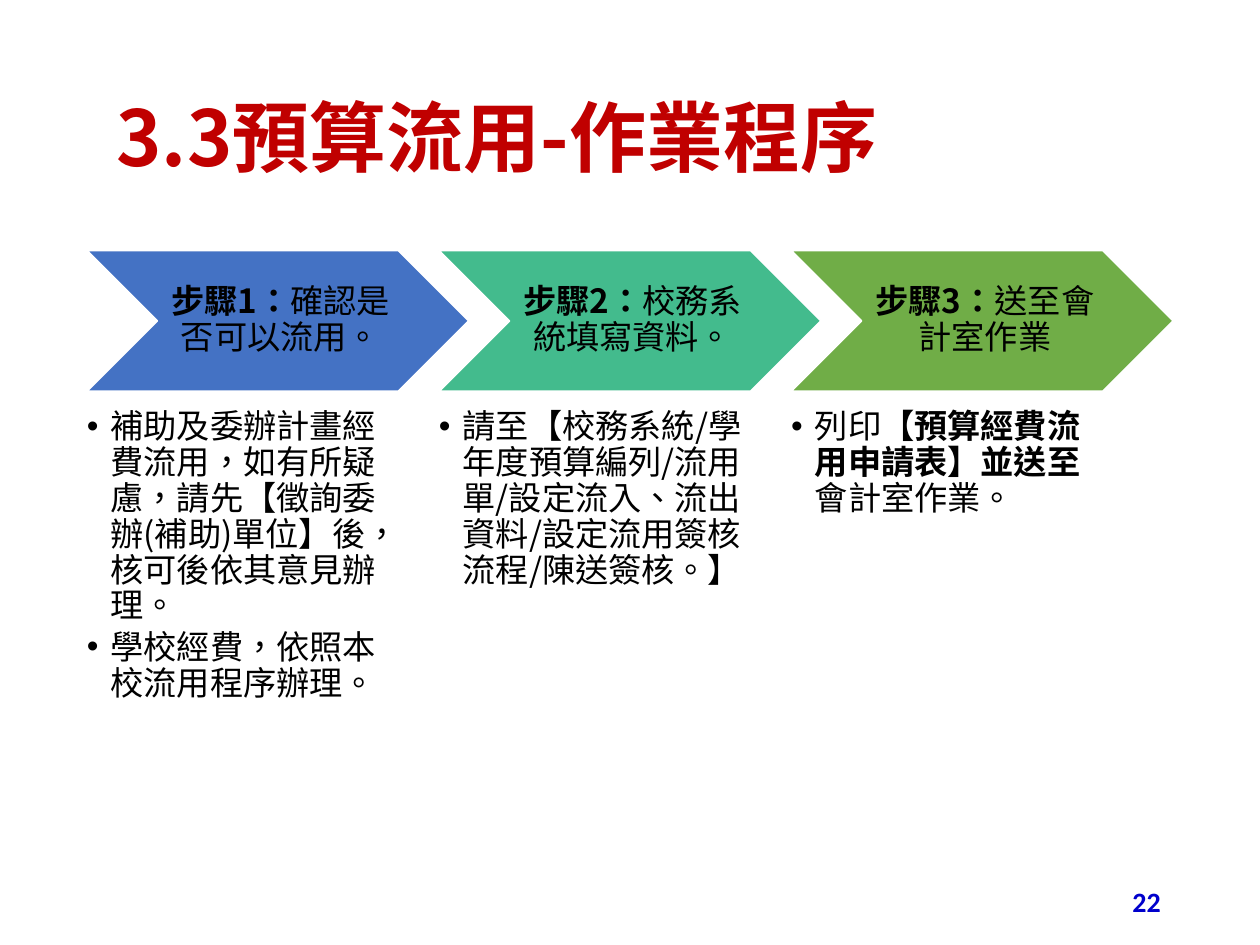
from pptx import Presentation
from pptx.dml.color import RGBColor
from pptx.enum.shapes import MSO_SHAPE as Shape
from pptx.enum.text import MSO_ANCHOR as Anchor, PP_ALIGN as Align
from pptx.oxml.ns import qn
from pptx.util import Cm, Pt
from lxml.etree import SubElement

RED = RGBColor(0xC0, 0x00, 0x00)
NAVY = RGBColor(0x00, 0x00, 0xCC)
BLACK = RGBColor(0x00, 0x00, 0x00)
WHITE = RGBColor(0xFF, 0xFF, 0xFF)
BLUE = RGBColor(0x44, 0x72, 0xC4)
TEAL = RGBColor(0x43, 0xBB, 0x8D)
GREEN = RGBColor(0x70, 0xAD, 0x47)
SANS = "Noto Sans CJK SC"

# Each step: colour, heading, bullets; a bullet is a list of (text, bold) runs.
STEPS = [
    (BLUE, [("步驟1：", True), ("確認是否可以流用。", False)],
     [[("補助及委辦計畫經費流用，如有所疑慮，請先【徵詢委辦(補助)單位】後，核可後依其意見辦理。", False)],
      [("學校經費，依照本校流用程序辦理。", False)]]),
    (TEAL, [("步驟2：", True), ("校務系統填寫資料。", False)],
     [[("請至【校務系統/學年度預算編列/流用單/設定流入、流出資料/設定流用簽核流程/陳送簽核。】", False)]]),
    (GREEN, [("步驟3：", True), ("送至會計室作業", False)],
     [[("列印", False), ("【預算經費流用申請表】並送至", True), ("會計室作業。", False)]]),
]


def add_run(para, text, size, color, bold, face=SANS):
    run = para.add_run()
    run.text = text
    font = run.font
    font.size, font.bold, font.name = Pt(size), bold, face
    font.color.rgb = color
    props = run._r.get_or_add_rPr()
    props.set("lang", "zh-TW")
    SubElement(props, qn("a:ea"), typeface=face)


def add_box(left, top, width, height, anchor, pads):
    """Add a wrapping text box; pads are left, top, right, bottom in cm."""
    box = slide.shapes.add_textbox(Cm(left), Cm(top), Cm(width), Cm(height))
    frame = box.text_frame
    frame.word_wrap = True
    frame.vertical_anchor = anchor
    frame.margin_left, frame.margin_top, frame.margin_right, frame.margin_bottom = map(Cm, pads)
    return frame


prs = Presentation()
prs.slide_width, prs.slide_height = Cm(25.4), Cm(19.05)
slide = prs.slides.add_slide(prs.slide_layouts[5])

title = slide.shapes.title
title.left, title.top, title.width, title.height = Cm(1.75), Cm(1.02), Cm(21.9), Cm(3.68)
title.text_frame.vertical_anchor = Anchor.MIDDLE
title.text_frame.margin_left = Cm(0.6)
para = title.text_frame.paragraphs[0]
para.alignment = Align.LEFT
para.line_spacing = 0.9
add_run(para, "3.3預算流用-作業程序", 44, RED, True)

frame = add_box(17.93, 17.65, 5.72, 1.02, Anchor.MIDDLE, (0.25, 0.13, 0.25, 0.13))
para = frame.paragraphs[0]
para.alignment = Align.RIGHT
add_run(para, "22", 16, NAVY, True, "Calibri")

for col, (color, head, bullets) in enumerate(STEPS):
    left = 1.75 + 7.1 * col
    arrow = slide.shapes.add_shape(Shape.CHEVRON, Cm(left), Cm(5.05), Cm(7.7), Cm(2.84))
    arrow.shadow.inherit = False
    arrow.fill.solid()
    arrow.fill.fore_color.rgb = color
    arrow.line.color.rgb = WHITE
    arrow.line.width = Pt(1)

    frame = add_box(left + 1.42, 5.05, 4.85, 2.84, Anchor.MIDDLE, (0.2, 0.08, 0.08, 0.08))
    para = frame.paragraphs[0]
    para.alignment = Align.CENTER
    para.line_spacing = 0.9
    for text, bold in head:
        add_run(para, text, 19, BLACK, bold)

    frame = add_box(left, 8.26, 6.17, 8.56, Anchor.TOP, (0, 0, 0, 0))
    for row, runs in enumerate(bullets):
        para = frame.add_paragraph() if row else frame.paragraphs[0]
        para.level = 1
        para.line_spacing = 0.9
        para.space_after = Pt(3)
        props = para._p.get_or_add_pPr()
        props.set("marL", str(Cm(0.48)))
        props.set("indent", str(Cm(-0.48)))
        SubElement(props, qn("a:buFont"), typeface="Arial")
        SubElement(props, qn("a:buChar"), char="•")
        for text, bold in runs:
            add_run(para, text, 19, BLACK, bold)

prs.save("out.pptx")
